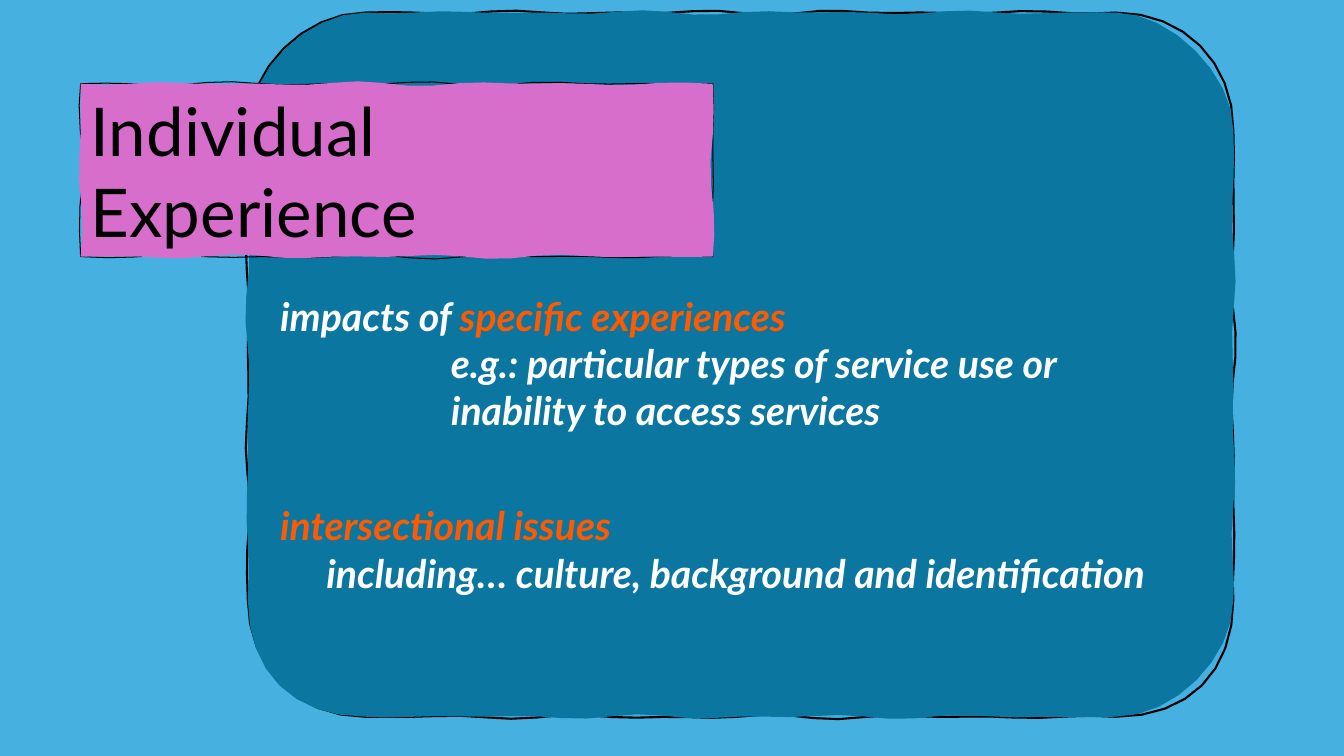
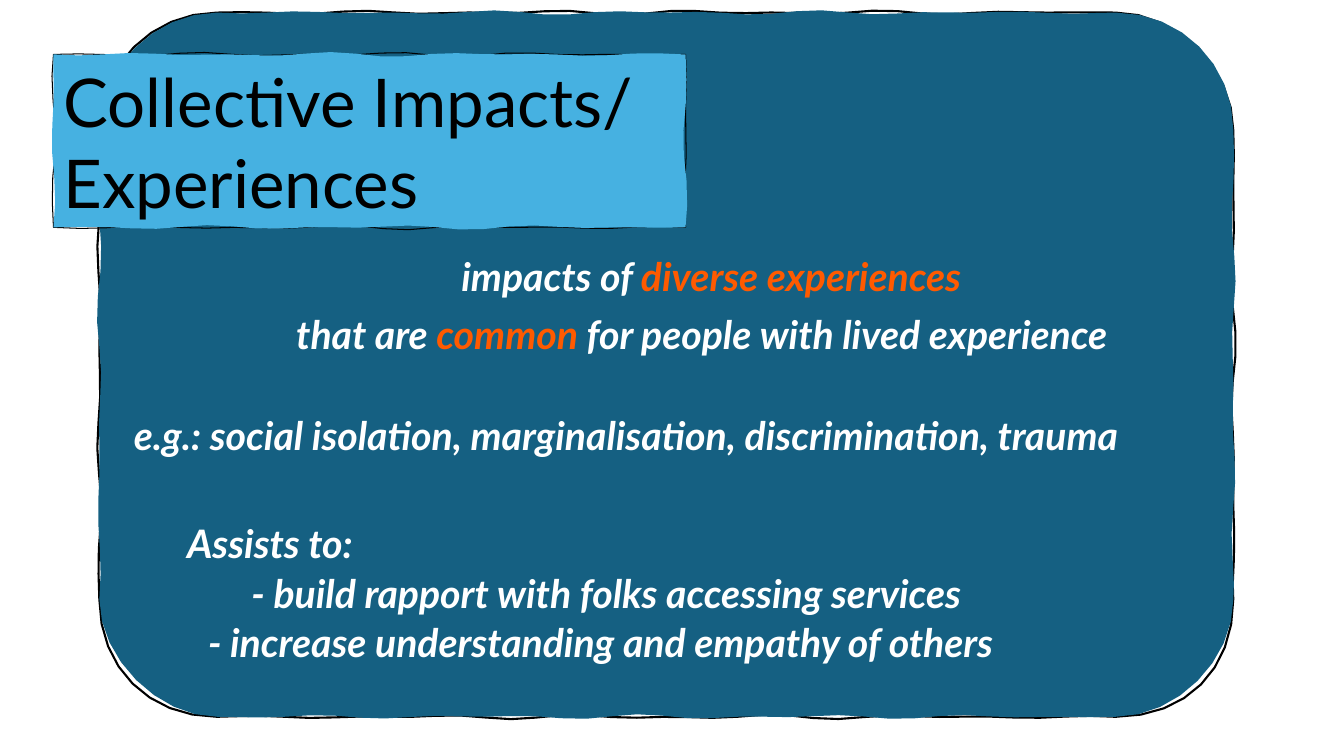
from dataclasses import dataclass
from math import hypot, pi, sin

from pptx import Presentation
from pptx.dml.color import RGBColor
from pptx.enum.text import MSO_ANCHOR, MSO_AUTO_SIZE, PP_ALIGN
from pptx.util import Pt

LEFT = PP_ALIGN.LEFT
MIDDLE = MSO_ANCHOR.MIDDLE
FIXED = MSO_AUTO_SIZE.NONE


@dataclass(frozen=True)
class Theme:
    font: str = "Lato"
    head: int = 48
    body: int = 28
    black: str = "000000"
    white: str = "FFFFFF"
    sky: str = "46B1E1"
    teal: str = "0B76A0"
    navy: str = "156082"
    pink: str = "D86ECC"
    hot: str = "FF5A00"


T = Theme()
RADIUS = 84
STEP = 18
SQUARE = (0, 0, 0, 0)
LABEL = (451.5, 123.5)


def rgb(code):
    return RGBColor.from_string(code)


def put(par, text, size=T.body, color=T.white, bold=False, italic=False):
    run = par.add_run()
    run.text = text
    font = run.font
    font.name, font.size = T.font, Pt(size)
    font.bold, font.italic = bold, italic
    font.color.rgb = rgb(color)


def wave(dist, span, phase):
    """Hand-drawn offset along an edge, fading to zero at both ends."""
    fade = sin(pi * dist / span) ** 0.4 if 0 < dist < span else 0
    return 0.9 * fade * (sin(dist / 12 + phase) + sin(dist / 19 + 2 * phase))


def bend(start, near, far, end, count=8):
    """Points on a cubic curve."""
    for i in range(count + 1):
        t = i / count
        q = 1 - t
        yield tuple(q**3 * a + 3 * q * q * t * b + 3 * q * t * t * c + t**3 * d
                    for a, b, c, d in zip(start, near, far, end))


def trace(box, radius, bulges, phase):
    """Wavy rectangle; bulges run clockwise from the top right corner."""
    x, y, w, h = box
    ends = [(x, y), (x + w, y), (x + w, y + h), (x, y + h)]
    points = []
    for i, bulge in enumerate(bulges):
        (ax, ay), (bx, by), (cx, cy) = (ends[(i + j) % 4] for j in range(3))
        size, next_size = hypot(bx - ax, by - ay), hypot(cx - bx, cy - by)
        ux, uy = (bx - ax) / size, (by - ay) / size
        vx, vy = (cx - bx) / next_size, (cy - by) / next_size
        span = size - 2 * radius
        for n in range(int(span / STEP) + 1):
            dist = n * STEP
            off = wave(dist, span, phase + 2 * i)
            along = radius + dist
            points.append((ax + ux * along - uy * off, ay + uy * along + ux * off))
        if not radius:
            points.append((bx, by))
            continue
        pull = radius * (1 - bulge)
        points += bend((bx - ux * radius, by - uy * radius),
                       (bx - ux * pull, by - uy * pull),
                       (bx + vx * pull, by + vy * pull),
                       (bx + vx * radius, by + vy * radius))
    return points


def draw(slide, points, fill=None, weight=None):
    first, *rest = [(Pt(x), Pt(y)) for x, y in points]
    pen = slide.shapes.build_freeform(*first)
    pen.add_line_segments(rest, close=True)
    shape = pen.convert_to_shape()
    shape.shadow.inherit = False
    if fill:
        shape.fill.solid()
        shape.fill.fore_color.rgb = rgb(fill)
        shape.line.fill.background()
    else:
        shape.fill.background()
        shape.line.color.rgb = rgb(T.black)
        shape.line.width = Pt(weight)


def sketch(slide, box, fill, weight, radius=0, inner=SQUARE, outer=SQUARE):
    """Filled wavy shape with a loose outline that does not quite match it."""
    draw(slide, trace(box, radius, outer, 2.6), weight=weight)
    draw(slide, trace(box, radius, inner, 0.5), fill=fill)


def place(shape, box):
    shape.left, shape.top, shape.width, shape.height = map(Pt, box)


def label(slide, text, spot, fill):
    box = (*spot, *LABEL)
    sketch(slide, box, fill, 0.75)
    title = slide.shapes.title
    place(title, box)
    slide.shapes._spTree.append(title._element)
    frame = title.text_frame
    frame.word_wrap, frame.auto_size = True, FIXED
    frame.vertical_anchor = MIDDLE
    par = frame.paragraphs[0]
    par.alignment = LEFT
    put(par, text, size=T.head, color=T.black)


def notes(slide, box, lines):
    """Each line is (indent, space before, runs); a run is (text, colour)."""
    frame = slide.shapes.add_textbox(*map(Pt, box)).text_frame
    frame.word_wrap = True
    for i, (indent, gap, runs) in enumerate(lines):
        par = frame.add_paragraph() if i else frame.paragraphs[0]
        par._p.get_or_add_pPr().set("marL", str(Pt(indent)))
        if gap:
            par.space_before = Pt(gap)
        for text, color in runs:
            put(par, text, color=color, bold=True, italic=True)


def page(deck, back, panel, head, body):
    slide = deck.slides.add_slide(deck.slide_layouts[5])
    slide.background.fill.solid()
    slide.background.fill.fore_color.rgb = rgb(back)
    sketch(slide, weight=1.5, radius=RADIUS, **panel)
    label(slide, **head)
    notes(slide, **body)


def main():
    deck = Presentation()
    deck.slide_width, deck.slide_height = Pt(960), Pt(540)
    page(
        deck, T.sky,
        panel=dict(box=(177, 9, 704, 503), fill=T.teal,
                   inner=(0.47, 0.5, 0.62, 0.5), outer=(0.58, 0.62, 0.58, 0.52)),
        head=dict(text="Individual Experience", spot=(57.6, 59.8), fill=T.pink),
        body=dict(box=(193, 205, 650, 225), lines=[
            (0, 0, [("impacts of ", T.white), ("specific experiences", T.hot)]),
            (122, 0, [("e.g.: particular types of service use or "
                       "inability to access services", T.white)]),
            (0, 49, [("intersectional issues", T.hot)]),
            (33, 0, [("including… culture, background and identification",
                      T.white)]),
        ]))
    page(
        deck, T.white,
        panel=dict(box=(71, 9, 810, 503), fill=T.navy,
                   inner=(0.56, 0.52, 0.5, 0.53), outer=(0.52, 0.6, 0.58, 0.55)),
        head=dict(text="Collective Impacts/ Experiences", spot=(38.2, 38.9),
                  fill=T.sky),
        body=dict(box=(88.5, 176.5, 790, 302), lines=[
            (234, 0, [("impacts of ", T.white), ("diverse experiences", T.hot)]),
            (116, 8, [("that are ", T.white), ("common", T.hot),
                      (" for people with lived experience", T.white)]),
            (0, 38.5, [("e.g.: social isolation, marginalisation, "
                        "discrimination, trauma", T.white)]),
            (38, 43.5, [("Assists to:", T.white)]),
            (84, 2.4, [("- build rapport with folks accessing services",
                        T.white)]),
            (53, 1, [("- increase understanding and empathy of others",
                      T.white)]),
        ]))
    deck.save("out.pptx")


if __name__ == "__main__":
    main()
